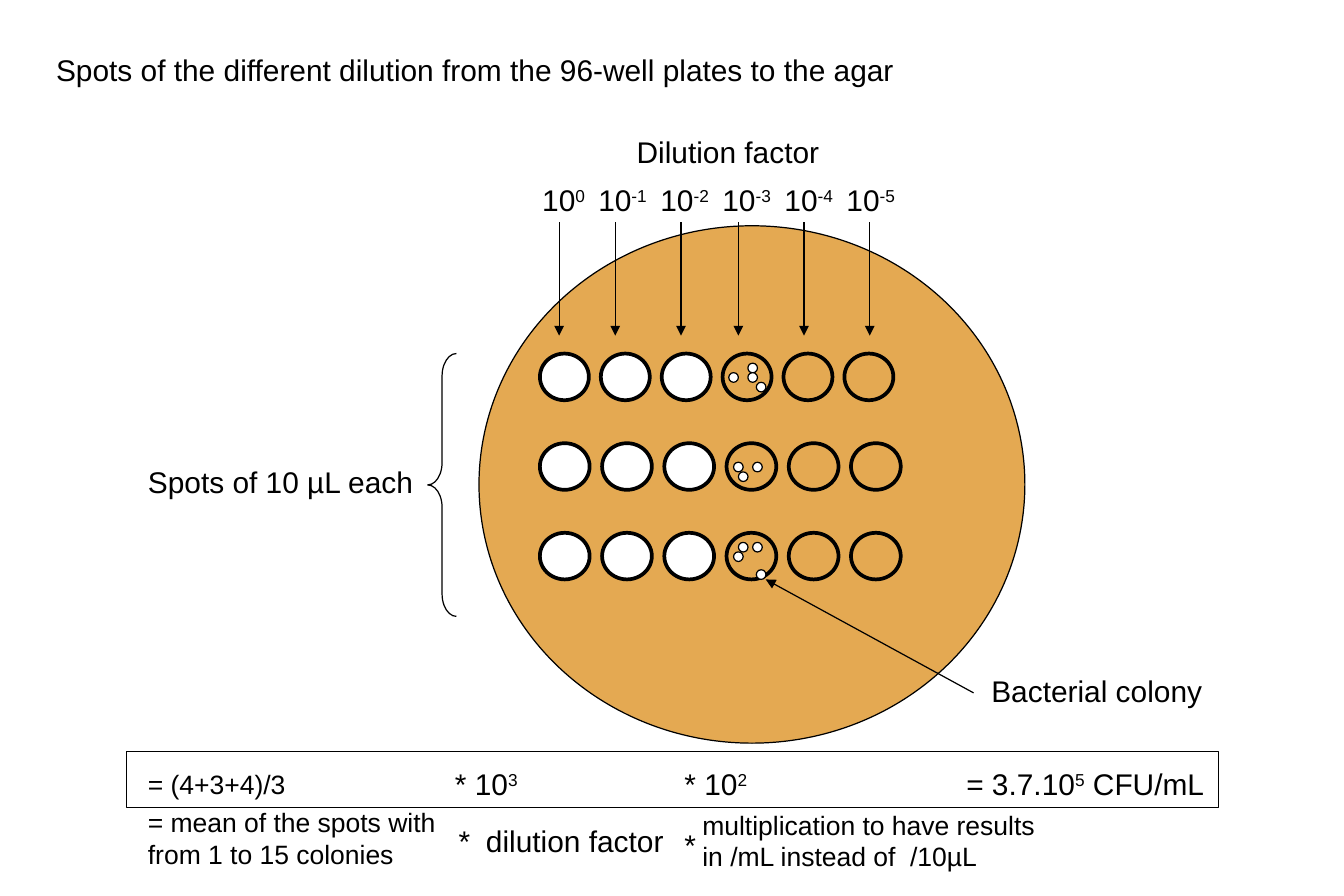
from pptx import Presentation
from pptx import util as u
from pptx.dml.color import RGBColor
from pptx.enum import shapes, text
from pptx.oxml import parse_xml
from pptx.oxml.ns import nsdecls

COLORS = {"ink": "000000", "agar": "E4A952", "growth": "FFFFFF"}
FONT = "Arial"
TITLE = "Spots of the different dilution from the 96-well plates to the agar"
TITLE_BOX = (26.6, 27.4, 524.2, 28.8)

PLATE = (288.7, 136.1, 329, 311.8)
FORMULA_FRAME = (76.3, 452.9, 658.1, 33.8)
BRACE = (257.8, 213.1, 17.3, 158.4)
COLONY_POINTER = (586.8, 417.6, 461.5, 349.2)

DILUTIONS = [("0", 337), ("-1", 370.8), ("-2", 410.4),
             ("-3", 445), ("-4", 484.6), ("-5", 524.2)]
ARROW_TOP, ARROW_BOTTOM = 133.9, 202.3

SPOT_FILLS = ["growth"] * 3 + ["agar"] * 3
COUNTED_SPOT = 3
SPOT_LEFT, SPOT_TOP, ROW_PITCH = 325.4, 213.1, 54
SPOT_HEIGHT, COLONY_SIZE = 28.1, 5.8
ROWS = [
    (36.7, 29.5, [(3.7, 11.5), (15.2, 5.8), (20.3, 17.3), (15.2, 11.5)]),
    (37.5, 30.0, [(4.2, 11.5), (7.1, 17.3), (15.7, 11.5)]),
    (37.5, 30.0, [(4.2, 11.5), (15.7, 5.8), (17.9, 22.3), (7.1, 5.8)]),
]

LABELS = [
    ((376.6, 77, 124.6, 28.8), 18, False, ["Dilution factor"]),
    ((82.1, 275.8, 175, 28.8), 18, False, ["Spots of 10 µL each"]),
    ((590.4, 401.8, 141.8, 28.8), 18, False, ["Bacterial colony"]),
    ((82.1, 459.4, 158.4, 26.6), 16, True, ["= (4+3+4)/3"]),
    ((267.1, 457.9, 53.3, 28.8), 18, False, ["* 10", "3"]),
    ((405.4, 457.9, 53.3, 28.8), 18, False, ["* 10", "2"]),
    ((575.3, 457.9, 158.4, 28.8), 18, False, ["= 3.7.10", "5", " CFU/mL"]),
    ((82.1, 482.4, 211.7, 48.2), 16, True, ["= mean of the spots with from 1 to 15 colonies"]),
    ((269.3, 492.5, 21.6, 28.8), 18, False, ["*"]),
    ((285.8, 492.5, 121.7, 28.8), 18, False, ["dilution factor"]),
    ((405.4, 494.6, 21.6, 28.8), 18, False, ["*"]),
    ((416.2, 483.8, 215.3, 46.1), 16, True,
     ["multiplication to have results in /mL instead of  /10µL"]),
]


def rgb(name):
    return RGBColor.from_string(COLORS[name])


def points(values):
    return [u.Pt(value) for value in values]


def write(frame, pieces, size, wrap):
    layout = {"word_wrap": wrap, "auto_size": text.MSO_AUTO_SIZE.NONE,
              "vertical_anchor": text.MSO_ANCHOR.TOP,
              "margin_left": u.Pt(7.2), "margin_right": u.Pt(7.2),
              "margin_top": u.Pt(3.6), "margin_bottom": u.Pt(3.6)}
    for key, value in layout.items():
        setattr(frame, key, value)
    paragraph = frame.paragraphs[0]
    paragraph.alignment = text.PP_ALIGN.LEFT
    for index, piece in enumerate(pieces):
        run = paragraph.add_run()
        run.text = piece
        for key, value in {"name": FONT, "size": u.Pt(size), "bold": False}.items():
            setattr(run.font, key, value)
        run.font.color.rgb = rgb("ink")
        if index == 1:
            run._r.get_or_add_rPr().set("baseline", "30000")


def add_label(slide, box, size, wrap, pieces):
    write(slide.shapes.add_textbox(*points(box)).text_frame, pieces, size, wrap)


def add_outline(slide, kind, box, fill=None, weight=0.75):
    outline = slide.shapes.add_shape(kind, *points(box))
    outline.shadow.inherit = False
    if fill:
        outline.fill.solid()
        outline.fill.fore_color.rgb = rgb(fill)
    else:
        outline.fill.background()
    outline.line.color.rgb = rgb("ink")
    outline.line.width = u.Pt(weight)
    return outline


def add_arrow(slide, ends):
    arrow = slide.shapes.add_connector(shapes.MSO_CONNECTOR.STRAIGHT, *points(ends))
    arrow.line.color.rgb = rgb("ink")
    arrow.line.width = u.Pt(0.75)
    arrow.line._get_or_add_ln().append(
        parse_xml(f'<a:tailEnd {nsdecls("a")} type="triangle"/>'))
    arrow._element.spPr.append(parse_xml(f'<a:effectLst {nsdecls("a")}/>'))


def add_spots(slide):
    oval = shapes.MSO_SHAPE.OVAL
    for row, (pitch, width, colonies) in enumerate(ROWS):
        top = SPOT_TOP + row * ROW_PITCH
        for column, fill in enumerate(SPOT_FILLS):
            left = SPOT_LEFT + column * pitch
            add_outline(slide, oval, (left, top, width, SPOT_HEIGHT), fill, 2.25)
        counted_left = SPOT_LEFT + COUNTED_SPOT * pitch
        for dx, dy in colonies:
            add_outline(slide, oval, (counted_left + dx, top + dy, COLONY_SIZE, COLONY_SIZE),
                        "growth")


def add_dilutions(slide):
    for index, (exponent, arrow_x) in enumerate(DILUTIONS):
        box = (353.5 + 37.4 * (index - 1), 105.8, 45.4, 28.8) if index else (319.7, 105.8, 41, 28.8)
        add_label(slide, box, 18, False, ["10", exponent])
        add_arrow(slide, (arrow_x, ARROW_TOP, arrow_x, ARROW_BOTTOM))


def main():
    deck = Presentation()
    deck.slide_width, deck.slide_height = points((810, 540))
    slide = deck.slides.add_slide(deck.slide_layouts[5])
    title = slide.shapes.title
    for key, value in zip(("left", "top", "width", "height"), points(TITLE_BOX)):
        setattr(title, key, value)
    write(title.text_frame, [TITLE], 18, False)

    add_outline(slide, shapes.MSO_SHAPE.OVAL, PLATE, "agar")
    add_spots(slide)
    add_dilutions(slide)
    add_outline(slide, shapes.MSO_SHAPE.RECTANGLE, FORMULA_FRAME)
    brace = add_outline(slide, shapes.MSO_SHAPE.LEFT_BRACE, BRACE)
    brace.adjustments[0] = 0.78
    brace.adjustments[1] = 0.5
    add_arrow(slide, COLONY_POINTER)
    for label in LABELS:
        add_label(slide, *label)
    deck.save("out.pptx")


if __name__ == "__main__":
    main()
